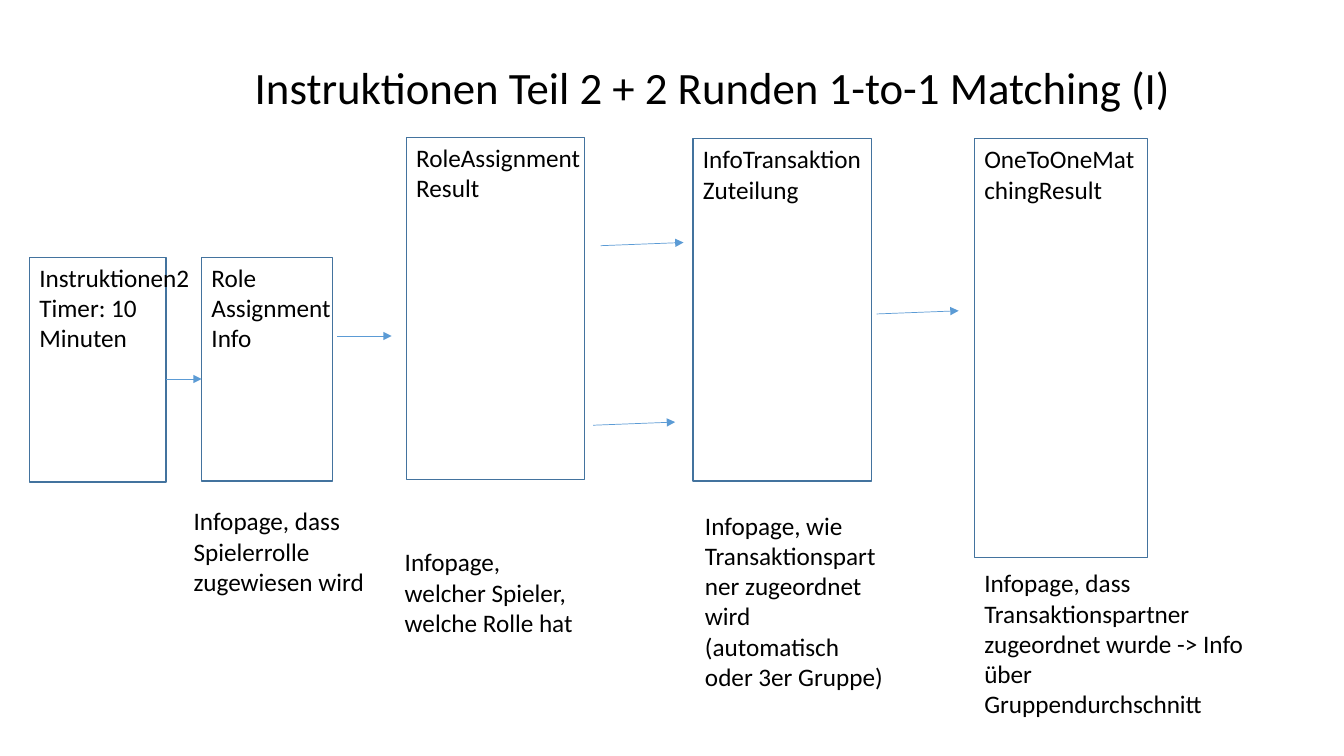
from lxml.etree import SubElement
from pptx import Presentation
from pptx.dml.color import RGBColor
from pptx.enum.shapes import MSO_CONNECTOR, MSO_SHAPE
from pptx.enum.text import MSO_ANCHOR, MSO_AUTO_SIZE, PP_ALIGN
from pptx.oxml.ns import qn
from pptx.util import Pt

PX = 9525  # EMU per px, 96 px to the inch


def color(hex_code):
    return RGBColor.from_string(hex_code)


def write(box, lines, size):
    frame = box.text_frame
    frame.word_wrap = True
    frame.auto_size = MSO_AUTO_SIZE.NONE
    frame.vertical_anchor = MSO_ANCHOR.TOP
    frame.text = "\n".join(lines)
    for paragraph in frame.paragraphs:
        paragraph.alignment = PP_ALIGN.LEFT
        paragraph.line_spacing = 1.0
        paragraph.space_before = Pt(0)
        paragraph.font.name = "Calibri"
        paragraph.font.size = Pt(size)
        paragraph.font.color.rgb = color("000000")


deck = Presentation()
deck.slide_width, deck.slide_height = 1280 * PX, 720 * PX
slide = deck.slides.add_slide(deck.slide_layouts[5])

# Title
title = slide.shapes.title
title.left, title.top, title.width, title.height = [v * PX for v in (233, 52, 918, 61)]
write(title, ["Instruktionen Teil 2 + 2 Runden 1-to-1 Matching (I)"], 32)

# Pages: frame (left, top, width, height), label (width, height), label lines
pages = [
    ((28, 245, 130, 214), (173, 126), ["Instruktionen2", "Timer: 10 Minuten"]),
    ((192, 245, 125, 213), (140, 182), ["Role", "Assignment", "Info"]),
    ((387, 131, 170, 326), (192, 68), ["RoleAssignment Result"]),
    ((660, 132, 170, 326), (238, 68), ["InfoTransaktion", "Zuteilung"]),
    ((928, 132, 165, 399), (165, 68), ["OneToOneMatchingResult"]),
]
for (left, top, width, height), (label_width, label_height), lines in pages:
    page = slide.shapes.add_group_shape()
    frame = page.shapes.add_shape(
        MSO_SHAPE.RECTANGLE, left * PX, top * PX, width * PX, height * PX)
    frame.shadow.inherit = False
    frame.fill.background()
    frame.line.color.rgb = color("43739E")
    frame.line.width = Pt(1)
    label = page.shapes.add_textbox(
        left * PX, top * PX, label_width * PX, label_height * PX)
    write(label, lines, 18)

# Captions under the pages
captions = [
    (175, 477, 189, 126, "Infopage, dass Spielerrolle zugewiesen wird"),
    (376, 516, 189, 126, "Infopage, welcher Spieler, welche Rolle hat"),
    (662, 481, 189, 213, "Infopage, wie Transaktionspartner zugeordnet wird "
                         "(automatisch oder 3er Gruppe)"),
    (928, 536, 267, 184, "Infopage, dass Transaktionspartner zugeordnet wurde "
                         "-> Info über Gruppendurchschnitt"),
]
for left, top, width, height, text in captions:
    caption = slide.shapes.add_textbox(left * PX, top * PX, width * PX, height * PX)
    write(caption, [text], 18)

# Arrows between the pages: start x, start y, end x, end y
arrows = [
    (158, 361, 192, 361),
    (321, 320, 373, 320),
    (572, 234, 651, 231),
    (565, 405, 643, 402),
    (835, 299, 913, 296),
]
for ends in arrows:
    arrow = slide.shapes.add_connector(MSO_CONNECTOR.STRAIGHT, *[v * PX for v in ends])
    arrow.line.color.rgb = color("5B9BD5")
    arrow.line.width = Pt(0.5)
    SubElement(arrow.line._get_or_add_ln(), qn("a:tailEnd"), type="triangle")
    SubElement(arrow._element.spPr, qn("a:effectLst"))

deck.save("out.pptx")
